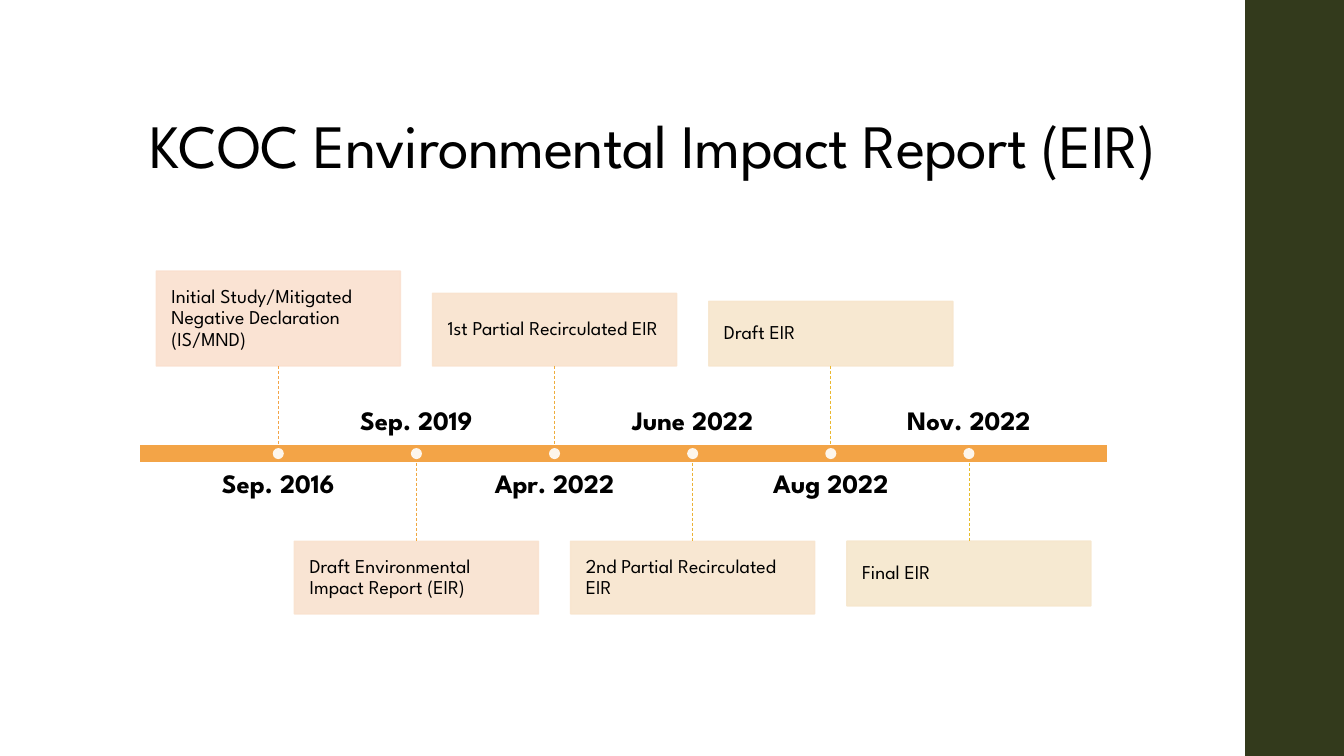
from lxml import etree
from pptx import Presentation
from pptx.dml.color import RGBColor
from pptx.enum.dml import MSO_LINE
from pptx.enum.shapes import MSO_CONNECTOR, MSO_SHAPE
from pptx.enum.text import MSO_ANCHOR, PP_ALIGN
from pptx.oxml.ns import qn
from pptx.util import Inches, Pt

TOP, MIDDLE, BOTTOM = MSO_ANCHOR.TOP, MSO_ANCHOR.MIDDLE, MSO_ANCHOR.BOTTOM
LEFT, CENTER = PP_ALIGN.LEFT, PP_ALIGN.CENTER
RECTANGLE, OVAL = MSO_SHAPE.RECTANGLE, MSO_SHAPE.OVAL
DASH = MSO_LINE.DASH

SLIDE_WIDTH, SLIDE_HEIGHT = 13.33, 7.5
FIRST_CENTER, PITCH = 2.76, 1.37
BAR_TOP, BAR_HEIGHT = 4.41, 0.18
BAR_BOTTOM = BAR_TOP + BAR_HEIGHT
STEM = 0.78
CARD_WIDTH = 2.42
LABEL_WIDTH, LABEL_HEIGHT, LABEL_GAP = 2.2, 0.52, 0.08
DOT = 0.11

# date, text, card height, card colour, stem colour
milestones = [
    ("Sep. 2016", "Initial Study/Mitigated Negative Declaration (IS/MND)", 0.94, "FAE0CF", "F3A447"),
    ("Sep. 2019", "Draft Environmental Impact Report (EIR)", 0.72, "F9E2CF", "F1A841"),
    ("Apr. 2022", "1st Partial Recirculated EIR", 0.72, "F9E3CE", "EFAD3B"),
    ("June 2022", "2nd Partial Recirculated EIR", 0.72, "F8E5CE", "ECB235"),
    ("Aug 2022", "Draft EIR", 0.64, "F7E6CD", "EAB72F"),
    ("Nov. 2022", "Final EIR", 0.64, "F6E7CD", "E7BC29"),
]

presentation = Presentation()
presentation.slide_width = Inches(SLIDE_WIDTH)
presentation.slide_height = Inches(SLIDE_HEIGHT)
slide = presentation.slides.add_slide(presentation.slide_layouts[6])


def add_block(kind, left, top, width, height, fill, line=None, opacity=100):
    """Add a flat filled shape; opacity in percent covers fill and outline."""
    shape = slide.shapes.add_shape(kind, Inches(left), Inches(top), Inches(width), Inches(height))
    shape.shadow.inherit = False
    shape.fill.solid()
    shape.fill.fore_color.rgb = RGBColor.from_string(fill)
    if line:
        shape.line.color.rgb = RGBColor.from_string(line)
        shape.line.width = Pt(1.1)
    else:
        shape.line.fill.background()
    if opacity < 100:
        for color in shape._element.spPr.iter(qn("a:srgbClr")):
            etree.SubElement(color, qn("a:alpha"), val=str(opacity * 1000))
    return shape


def write_text(shape, text, size, anchor, align, margins, bold=False):
    """Fill the shape with one paragraph; margins are (sides, top and bottom)."""
    frame = shape.text_frame
    frame.word_wrap = True
    frame.vertical_anchor = anchor
    frame.margin_left = frame.margin_right = Inches(margins[0])
    frame.margin_top = frame.margin_bottom = Inches(margins[1])
    paragraph = frame.paragraphs[0]
    paragraph.alignment = align
    paragraph.line_spacing = 0.9
    run = paragraph.add_run()
    run.text = text
    run.font.name = "League Spartan"
    run.font.size = Pt(size)
    run.font.bold = bold
    run.font.color.rgb = RGBColor.from_string("000000")
    return run


add_block(RECTANGLE, 12.35, 0, 1, SLIDE_HEIGHT, "333A1C")

title = slide.shapes.add_textbox(Inches(1.38), Inches(0.4), Inches(10.6), Inches(1.45))
title_run = write_text(title, "KCOC Environmental Impact Report (EIR)", 44, BOTTOM, LEFT, (0.1, 0.05))
title_run.font._element.set("spc", "-50")

add_block(RECTANGLE, 1.38, BAR_TOP, 9.61, BAR_HEIGHT, "F3A447", "FFFFFF")

for index, (date, text, card_height, card_color, stem_color) in enumerate(milestones):
    center = FIRST_CENTER + index * PITCH
    card_above = index % 2 == 0
    if card_above:
        stem_top = BAR_TOP - STEM
        card_top = stem_top - card_height
        label_top, label_anchor = BAR_BOTTOM + LABEL_GAP, TOP
    else:
        stem_top = BAR_BOTTOM
        card_top = stem_top + STEM
        label_top, label_anchor = BAR_TOP - LABEL_GAP - LABEL_HEIGHT, BOTTOM

    label = slide.shapes.add_textbox(
        Inches(center - LABEL_WIDTH / 2), Inches(label_top), Inches(LABEL_WIDTH), Inches(LABEL_HEIGHT))
    write_text(label, date, 19, label_anchor, CENTER, (0, 0), bold=True)

    card = add_block(RECTANGLE, center - CARD_WIDTH / 2, card_top, CARD_WIDTH, card_height,
                     card_color, card_color, opacity=90)
    write_text(card, text, 14, MIDDLE, LEFT, (0.15, 0.15))

    stem = slide.shapes.add_connector(
        MSO_CONNECTOR.STRAIGHT, Inches(center), Inches(stem_top), Inches(center), Inches(stem_top + STEM))
    stem.line.color.rgb = RGBColor.from_string(stem_color)
    stem.line.width = Pt(0.5)
    stem.line.dash_style = DASH
    etree.SubElement(stem._element.spPr, qn("a:effectLst"))

    add_block(OVAL, center - DOT / 2, BAR_TOP + (BAR_HEIGHT - DOT) / 2, DOT, DOT, "FFFFFF", opacity=90)

presentation.save("out.pptx")
